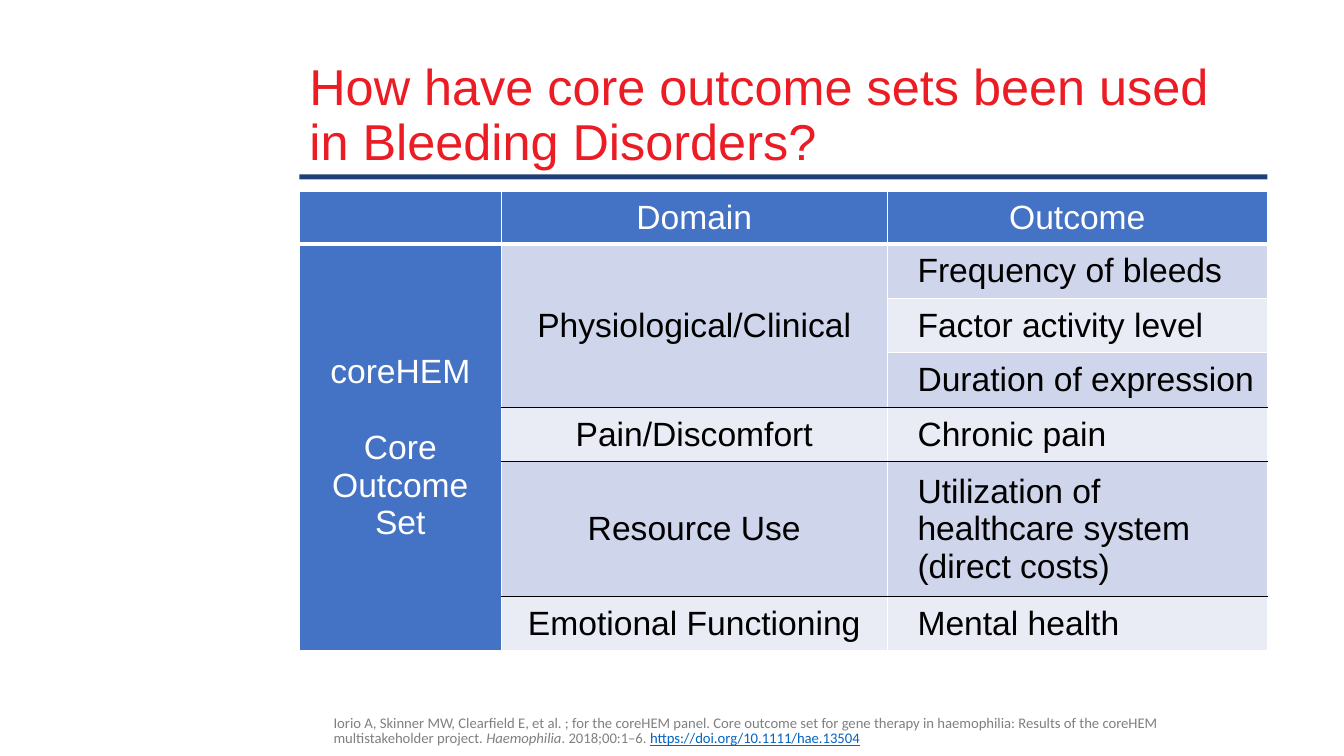
from dataclasses import dataclass

from lxml import etree
from pptx import Presentation
from pptx.dml.color import RGBColor
from pptx.enum.shapes import MSO_SHAPE
from pptx.enum.text import MSO_ANCHOR, PP_ALIGN
from pptx.oxml.ns import qn
from pptx.util import Emu, Pt

RECT = MSO_SHAPE.RECTANGLE
MIDDLE = MSO_ANCHOR.MIDDLE
LEFT, CENTER = PP_ALIGN.LEFT, PP_ALIGN.CENTER
PX = 9144


@dataclass(frozen=True)
class Theme:
    title: str = "EB1C24"
    rule: str = "1F3F78"
    head: str = "4472C4"
    bands: tuple = ("CFD5EA", "E9EBF5")
    white: str = "FFFFFF"
    black: str = "000000"
    grey: str = "808080"
    link: str = "0563C1"
    sans: str = "Arial"
    note: str = "Calibri"
    title_pt: float = 36
    table_pt: float = 24
    note_pt: float = 10.5


T = Theme()
TITLE = {"name": T.sans, "size": Pt(T.title_pt)}
TABLE = {"name": T.sans, "size": Pt(T.table_pt), "bold": False}
NOTE = {"name": T.note, "size": Pt(T.note_pt)}
COLS = (200, 383, 377)
ROWS = (49, 51, 51, 51, 51, 125, 51)
HEADINGS = ("", "Domain", "Outcome")
SET_NAME = ("coreHEM", "Core", "Outcome", "Set")
DOMAINS = (
    ("Physiological/Clinical",
     ("Frequency of bleeds", "Factor activity level", "Duration of expression")),
    ("Pain/Discomfort", ("Chronic pain",)),
    ("Resource Use", ("Utilization of healthcare system (direct costs)",)),
    ("Emotional Functioning", ("Mental health",)),
)
CITATION = (
    ("Iorio A, Skinner MW, Clearfield E, et al. ; for the coreHEM panel. "
     "Core outcome set for gene therapy in haemophilia: Results of the "
     "coreHEM multistakeholder project. ", T.grey, {}),
    ("Haemophilia", T.grey, {"italic": True}),
    (". 2018;00:1–6. ", T.grey, {}),
    ("https://doi.org/10.1111/hae.13504", T.link, {"underline": True}),
)


def px(*values):
    return [Emu(v * PX) for v in values]


def set_format(obj, fmt):
    for name, value in fmt.items():
        setattr(obj, name, value)


def add_run(p, text, color, fmt):
    r = p.add_run()
    r.text = text
    set_format(r.font, fmt)
    r.font.color.rgb = RGBColor.from_string(color)


def add_text(s, box, runs, fmt):
    tf = s.shapes.add_textbox(*px(*box)).text_frame
    set_format(tf, {"word_wrap": True, "vertical_anchor": MIDDLE})
    p = tf.paragraphs[0]
    p.line_spacing = 0.9
    for text, color, extra in runs:
        add_run(p, text, color, fmt | extra)


def add_bar(s, box, color):
    sp = s.shapes.add_shape(RECT, *px(*box))
    sp.shadow.inherit = False
    sp.fill.solid()
    sp.fill.fore_color.rgb = RGBColor.from_string(color)
    sp.line.fill.background()


def set_borders(cell, **changed):
    tc_pr = cell._tc.get_or_add_tcPr()
    for side in "LRTB":
        color, width = changed.get(side, (T.white, 1))
        ln = etree.SubElement(tc_pr, qn(f"a:ln{side}"), w=str(Pt(width)))
        fill = etree.SubElement(ln, qn("a:solidFill"))
        etree.SubElement(fill, qn("a:srgbClr"), val=color)


def fill_cell(cell, lines, fill, color, align=CENTER, inset=(10, 6), borders=None):
    set_borders(cell, **(borders or {}))
    cell.fill.solid()
    cell.fill.fore_color.rgb = RGBColor.from_string(fill)
    left, top, right = px(inset[0], inset[1], 10)
    set_format(cell, {"vertical_anchor": MIDDLE, "margin_left": left,
                      "margin_right": right, "margin_top": top,
                      "margin_bottom": top})
    tf = cell.text_frame
    for i, line in enumerate(lines):
        p = tf.paragraphs[0] if i == 0 else tf.add_paragraph()
        p.alignment = align
        add_run(p, line, color, TABLE)


def add_outcome_table(s, left, top):
    shape = s.shapes.add_table(len(ROWS), len(COLS),
                               *px(left, top, sum(COLS), sum(ROWS)))
    table = shape.table
    for col, width in zip(table.columns, px(*COLS)):
        col.width = width
    for row, height in zip(table.rows, px(*ROWS)):
        row.height = height
    heavy, thin = (T.white, 3), (T.black, 1)
    for c, heading in enumerate(HEADINGS):
        fill_cell(table.cell(0, c), [heading], T.head, T.white,
                  borders={"B": heavy})

    core = table.cell(1, 0)
    core.merge(table.cell(len(ROWS) - 1, 0))
    fill_cell(core, SET_NAME, T.head, T.white, borders={"T": heavy})
    core.text_frame.paragraphs[1].space_before = Pt(27.6)

    first = 1
    for domain, outcomes in DOMAINS:
        last = first + len(outcomes) - 1
        above = {"T": heavy if first == 1 else thin}
        below = {"B": thin} if last < len(ROWS) - 1 else {}
        cell = table.cell(first, 1)
        if last > first:
            cell.merge(table.cell(last, 1))
        fill_cell(cell, [domain], T.bands[(first - 1) % 2], T.black,
                  borders=above | below)
        for r, outcome in enumerate(outcomes, first):
            edges = (above if r == first else {}) | (below if r == last else {})
            fill_cell(table.cell(r, 2), [outcome], T.bands[(r - 1) % 2],
                      T.black, LEFT, (30, 7), edges)
        first = last + 1


def main():
    prs = Presentation()
    prs.slide_width, prs.slide_height = px(1333, 750)
    s = prs.slides.add_slide(prs.slide_layouts[6])
    add_bar(s, (297, 173, 960, 5), T.rule)
    title = "How have core outcome sets been used in Bleeding Disorders?"
    add_text(s, (297, 59, 960, 114), [(title, T.title, {})], TITLE)
    add_outcome_table(s, 297, 190)
    add_text(s, (321, 704, 845, 43), CITATION, NOTE)
    prs.save("out.pptx")


if __name__ == "__main__":
    main()
